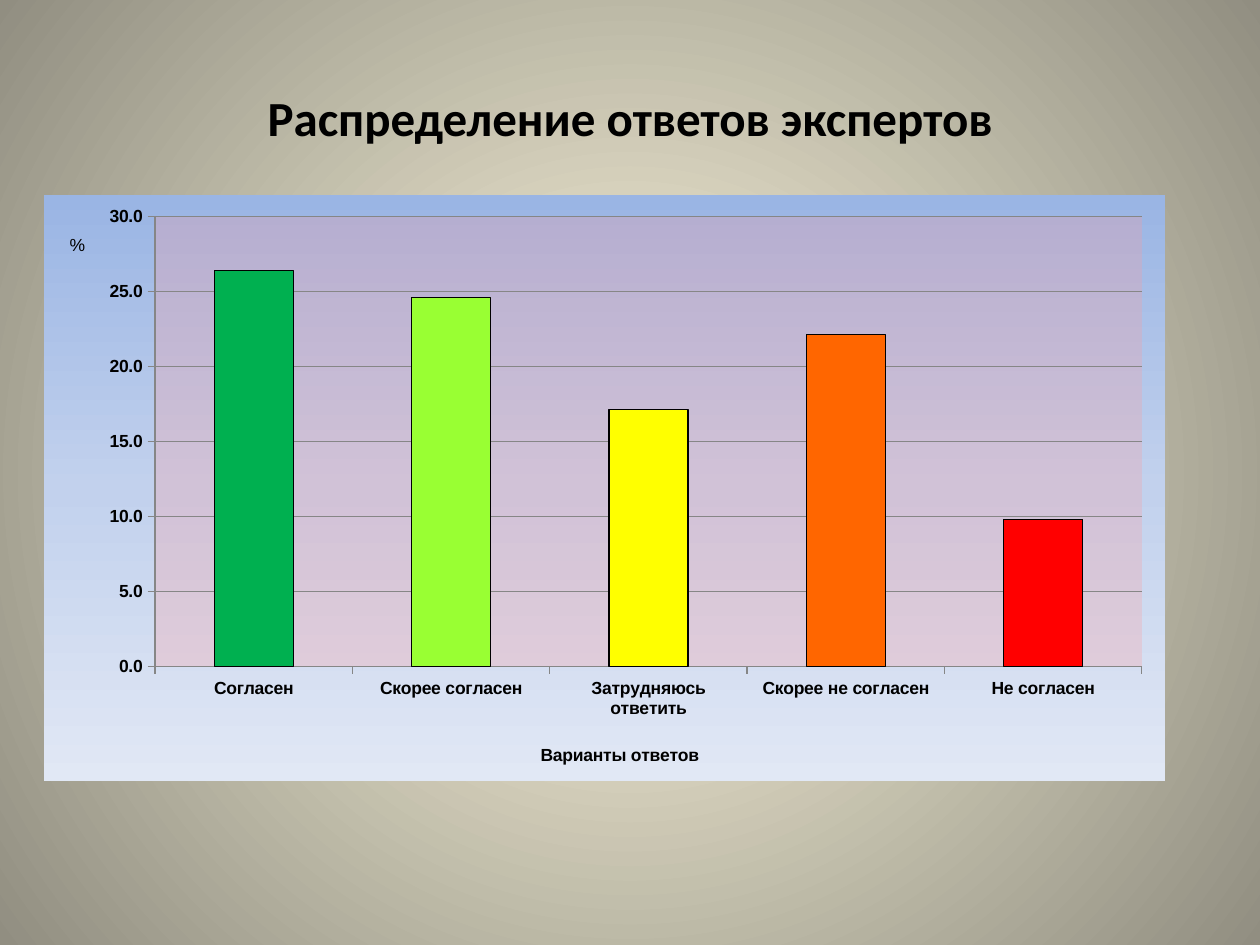
from dataclasses import dataclass

from pptx import Presentation
from pptx import util as u
from pptx.chart.data import CategoryChartData
from pptx.dml.color import RGBColor
from pptx.enum import chart as charts
from pptx.enum import text
from pptx.oxml import parse_xml
from pptx.oxml.ns import nsdecls


@dataclass(frozen=True)
class Theme:
    heading_font: str = "Calibri"
    chart_font: str = "Arial"
    heading_size: int = 28
    chart_size: int = 10
    ink: str = "000000"
    grid: str = "868686"
    background: tuple = ((0, "FCF7DD"), (100, "918E81"))
    chart_area: tuple = ((0, "9AB5E4"), (50, "C2D1ED"), (100, "E1E8F5"))
    plot_area: str = "FF9999"
    plot_opacity: int = 26


ANSWERS = (
    ("Cогласен", 26.4, "00B050"),
    ("Скорее согласен", 24.6, "99FF33"),
    ("Затрудняюсь ответить", 17.1, "FFFF00"),
    ("Скорее не согласен", 22.1, "FF6600"),
    ("Не согласен", 9.8, "FF0000"),
)
LINEAR = '<a:lin ang="5400000" scaled="0"/>'
RADIAL = (
    '<a:path path="circle"><a:fillToRect l="50000" t="50000" '
    'r="50000" b="50000"/></a:path>'
)


def color(value):
    return RGBColor.from_string(value)


def gradient_xml(stops, direction):
    items = "".join(
        f'<a:gs pos="{position * 1000}"><a:srgbClr val="{value}"/></a:gs>'
        for position, value in stops
    )
    return (
        f'<a:gradFill {nsdecls("a")} rotWithShape="1">'
        f"<a:gsLst>{items}</a:gsLst>{direction}</a:gradFill>"
    )


def shape_properties(fill):
    return parse_xml(
        f'<c:spPr {nsdecls("c", "a")}>{fill}<a:ln><a:noFill/></a:ln></c:spPr>'
    )


def layout(x, y, width=None, height=None):
    target = '<c:layoutTarget val="inner"/>' if width else ""
    sizes = f'<c:w val="{width}"/><c:h val="{height}"/>' if width else ""
    return parse_xml(
        f'<c:layout {nsdecls("c")}><c:manualLayout>{target}'
        '<c:xMode val="edge"/><c:yMode val="edge"/>'
        f'<c:x val="{x}"/><c:y val="{y}"/>{sizes}'
        "</c:manualLayout></c:layout>"
    )


class SlideBuilder:
    """Build the parts of one slide in a shared style."""

    def __init__(self, presentation, theme):
        self.theme = theme
        self.slide = presentation.slides.add_slide(presentation.slide_layouts[5])

    def format_font(self, font, name, size, bold=True):
        font.name = name
        font.size = u.Pt(size)
        font.bold = bold
        font.color.rgb = color(self.theme.ink)

    def background(self):
        self.slide.background.fill.gradient()
        fill = self.slide.element.xpath(".//p:bgPr/a:gradFill")[0]
        gradient = parse_xml(gradient_xml(self.theme.background, RADIAL))
        fill.getparent().replace(fill, gradient)

    def title(self, wording, left, top, width, height):
        shape = self.slide.shapes.title
        shape.left, shape.top = u.Inches(left), u.Inches(top)
        shape.width, shape.height = u.Inches(width), u.Inches(height)
        frame = shape.text_frame
        frame.vertical_anchor = text.MSO_ANCHOR.MIDDLE
        paragraph = frame.paragraphs[0]
        paragraph.alignment = text.PP_ALIGN.CENTER
        run = paragraph.add_run()
        run.text = wording
        self.format_font(run.font, self.theme.heading_font, self.theme.heading_size)

    def axis_title(self, axis, wording, x, y, bold):
        title = axis.axis_title
        run = title.text_frame.paragraphs[0].add_run()
        run.text = wording
        self.format_font(run.font, self.theme.chart_font, self.theme.chart_size, bold)
        for body in title.element.xpath("c:tx/c:rich/a:bodyPr"):
            body.set("rot", "0")
            body.set("vert", "horz")
        for old in title.element.xpath("c:layout"):
            title.element.remove(old)
        title.element.xpath("c:tx")[0].addnext(layout(x, y))

    def axis(self, axis, number_format):
        axis.major_tick_mark = charts.XL_TICK_MARK.OUTSIDE
        axis.minor_tick_mark = charts.XL_TICK_MARK.NONE
        axis.format.line.color.rgb = color(self.theme.grid)
        axis.tick_labels.number_format = number_format
        axis.tick_labels.number_format_is_linked = False

    def chart_fills(self, chart):
        area = shape_properties(gradient_xml(self.theme.chart_area, LINEAR))
        chart.element.xpath("c:chart")[0].addnext(area)
        plot_area = chart.element.xpath("c:chart/c:plotArea")[0]
        for old in plot_area.xpath("c:layout"):
            plot_area.remove(old)
        plot_area.insert(0, layout(0.099, 0.036, 0.88, 0.768))
        plot_area.append(shape_properties(
            f'<a:solidFill><a:srgbClr val="{self.theme.plot_area}">'
            f'<a:alpha val="{self.theme.plot_opacity * 1000}"/>'
            "</a:srgbClr></a:solidFill>"
        ))

    def bar_chart(self, answers, left, top, width, height):
        names, values, fills = zip(*answers)
        data = CategoryChartData(number_format="0.0")
        data.categories = names
        data.add_series("Series 1", values)
        chart = self.slide.shapes.add_chart(
            charts.XL_CHART_TYPE.COLUMN_CLUSTERED,
            u.Inches(left), u.Inches(top), u.Inches(width), u.Inches(height), data,
        ).chart
        chart.has_legend = False
        chart.has_title = False
        self.format_font(chart.font, self.theme.chart_font, self.theme.chart_size)
        plot = chart.plots[0]
        plot.gap_width = 150
        plot.vary_by_categories = False
        for index, fill in enumerate(fills):
            bar = plot.series[0].points[index].format
            bar.fill.solid()
            bar.fill.fore_color.rgb = color(fill)
            bar.line.color.rgb = color(self.theme.ink)
            bar.line.width = u.Pt(0.75)
        self.axis(chart.category_axis, "General")
        self.axis_title(chart.category_axis, "Варианты ответов", 0.44, 0.93, True)
        value_axis = chart.value_axis
        self.axis(value_axis, "0.0")
        self.axis_title(value_axis, "%", 0.02, 0.06, False)
        value_axis.minimum_scale, value_axis.maximum_scale = 0, 30
        value_axis.major_unit = 5
        value_axis.has_major_gridlines = True
        value_axis.major_gridlines.format.line.color.rgb = color(self.theme.grid)
        self.chart_fills(chart)


def main():
    presentation = Presentation()
    presentation.slide_width = u.Inches(10)
    presentation.slide_height = u.Inches(7.5)
    builder = SlideBuilder(presentation, Theme())
    builder.background()
    builder.title("Распределение ответов экспертов", 0.5, 0.3, 9, 1.25)
    builder.bar_chart(ANSWERS, 0.35, 1.55, 8.9, 4.65)
    presentation.save("out.pptx")


if __name__ == "__main__":
    main()
